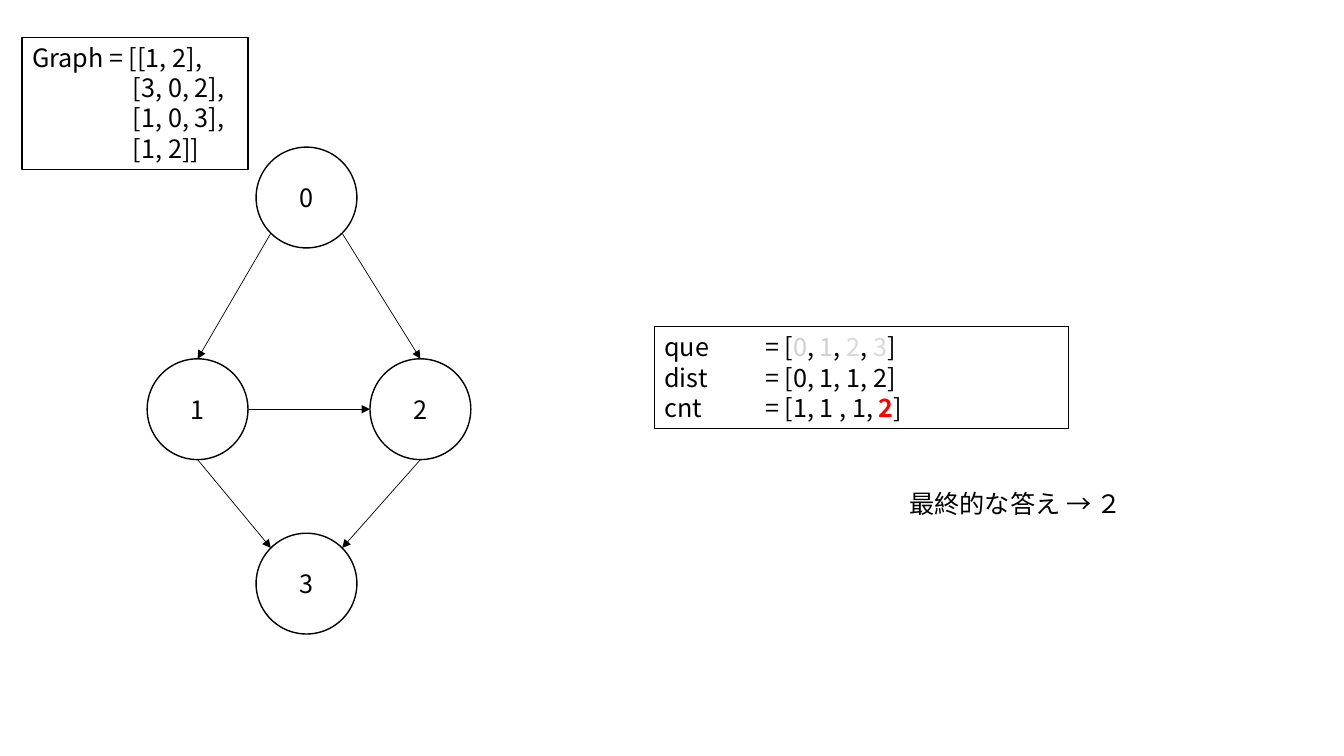
"""Build a slide tracing shortest-path counting on a four-node directed graph."""
import math

from lxml import etree
from pptx import Presentation
from pptx import util as u
from pptx.dml.color import RGBColor
from pptx.enum import shapes, text
from pptx.oxml.ns import qn

BLACK = RGBColor(0x00, 0x00, 0x00)
WHITE = RGBColor(0xFF, 0xFF, 0xFF)
RED = RGBColor(0xFF, 0x00, 0x00)
GRAY = RGBColor(0xD0, 0xCE, 0xCE)
LIGHT_GRAY = RGBColor(0xD9, 0xD9, 0xD9)

FONT = "Noto Sans CJK JP"
FONT_SIZE = u.Pt(18)
LINE_PITCH = u.Pt(21.6)
TAB_STOP = u.Inches(1)
SLIDE_WIDTH, SLIDE_HEIGHT = 13.33, 7.5

COLUMNS = {"left": 1.96, "middle": 3.04, "right": 4.17}
ROWS = {"top": 1.96, "centre": 4.06, "bottom": 5.79}
RADIUS = 0.5
NODES = {
    "0": ("middle", "top"),
    "1": ("left", "centre"),
    "2": ("right", "centre"),
    "3": ("middle", "bottom"),
}
ANGLES = {"E": 0, "SE": 45, "S": 90, "SW": 135, "W": 180, "NW": 225, "N": 270, "NE": 315}
EDGES = [
    ("0", "SW", "1", "N"),
    ("0", "SE", "2", "N"),
    ("1", "E", "2", "W"),
    ("1", "S", "3", "NW"),
    ("2", "S", "3", "NE"),
]

GRAPH_LINES = [
    [("Graph = [[1, 2],", BLACK)],
    [("\t[3, 0, 2],", BLACK)],
    [("\t[1, 0, 3],", BLACK)],
    [("\t[1, 2]]", BLACK)],
]
STATE_LINES = [
    [("que\t= [", BLACK), ("0", GRAY), (", ", BLACK), ("1", GRAY), (", ", BLACK),
     ("2", LIGHT_GRAY), (", ", BLACK), ("3", LIGHT_GRAY), ("]", BLACK)],
    [("dist \t= [0, 1, 1, 2]", BLACK)],
    [("cnt  \t= [1, 1 , 1, ", BLACK), ("2", RED), ("]", BLACK)],
]
ANSWER_LINES = [[("最終的な答え → ２", BLACK)]]

BOXES = [
    (GRAPH_LINES, (0.22, 0.37, 2.24, 1.31), True),
    (STATE_LINES, (6.49, 3.24, 4.11, 1.01), True),
    (ANSWER_LINES, (8.92, 4.8, 2.36, 0.4), False),
]


def add_tab_stop(paragraph):
    tabs = etree.SubElement(paragraph._element.get_or_add_pPr(), qn("a:tabLst"))
    tab = etree.SubElement(tabs, qn("a:tab"))
    tab.set("pos", str(TAB_STOP))
    tab.set("algn", "l")


def write_lines(shape, lines, alignment, anchor):
    frame = shape.text_frame
    frame.word_wrap = True
    frame.vertical_anchor = anchor
    for index, line in enumerate(lines):
        paragraph = frame.add_paragraph() if index else frame.paragraphs[0]
        paragraph.alignment = alignment
        paragraph.line_spacing = LINE_PITCH
        if any("\t" in words for words, color in line):
            add_tab_stop(paragraph)
        for words, color in line:
            run = paragraph.add_run()
            run.text = words
            run.font.name = FONT
            run.font.size = FONT_SIZE
            run.font.bold = color == RED
            run.font.color.rgb = color
            east_asian = etree.SubElement(run.font._element, qn("a:ea"))
            east_asian.set("typeface", FONT)


def add_outlined(slide, preset, bounds):
    shape = slide.shapes.add_shape(preset, *map(u.Inches, bounds))
    shape.shadow.inherit = False
    shape.fill.solid()
    shape.fill.fore_color.rgb = WHITE
    shape.line.color.rgb = BLACK
    shape.line.width = u.Pt(1)
    return shape


def add_node(slide, label):
    column, row = NODES[label]
    bounds = (COLUMNS[column] - RADIUS, ROWS[row] - RADIUS, 2 * RADIUS, 2 * RADIUS)
    circle = add_outlined(slide, shapes.MSO_SHAPE.OVAL, bounds)
    write_lines(circle, [[(label, BLACK)]], text.PP_ALIGN.CENTER, text.MSO_ANCHOR.MIDDLE)


def rim_point(label, side):
    column, row = NODES[label]
    angle = math.radians(ANGLES[side])
    return (u.Inches(COLUMNS[column] + RADIUS * math.cos(angle)),
            u.Inches(ROWS[row] + RADIUS * math.sin(angle)))


def add_edge(slide, source, source_side, target, target_side):
    arrow = slide.shapes.add_connector(
        shapes.MSO_CONNECTOR.STRAIGHT,
        *rim_point(source, source_side), *rim_point(target, target_side))
    arrow.line.color.rgb = BLACK
    arrow.line.width = u.Pt(0.5)
    etree.SubElement(arrow.line._get_or_add_ln(), qn("a:tailEnd")).set("type", "triangle")
    etree.SubElement(arrow._element.spPr, qn("a:effectLst"))


def add_box(slide, lines, bounds, outlined):
    if outlined:
        box = add_outlined(slide, shapes.MSO_SHAPE.RECTANGLE, bounds)
    else:
        box = slide.shapes.add_textbox(*map(u.Inches, bounds))
    write_lines(box, lines, text.PP_ALIGN.LEFT, text.MSO_ANCHOR.TOP)


def main():
    presentation = Presentation()
    presentation.slide_width = u.Inches(SLIDE_WIDTH)
    presentation.slide_height = u.Inches(SLIDE_HEIGHT)
    slide = presentation.slides.add_slide(presentation.slide_layouts[6])
    for label in NODES:
        add_node(slide, label)
    for edge in EDGES:
        add_edge(slide, *edge)
    for box in BOXES:
        add_box(slide, *box)
    presentation.save("out.pptx")


if __name__ == "__main__":
    main()
